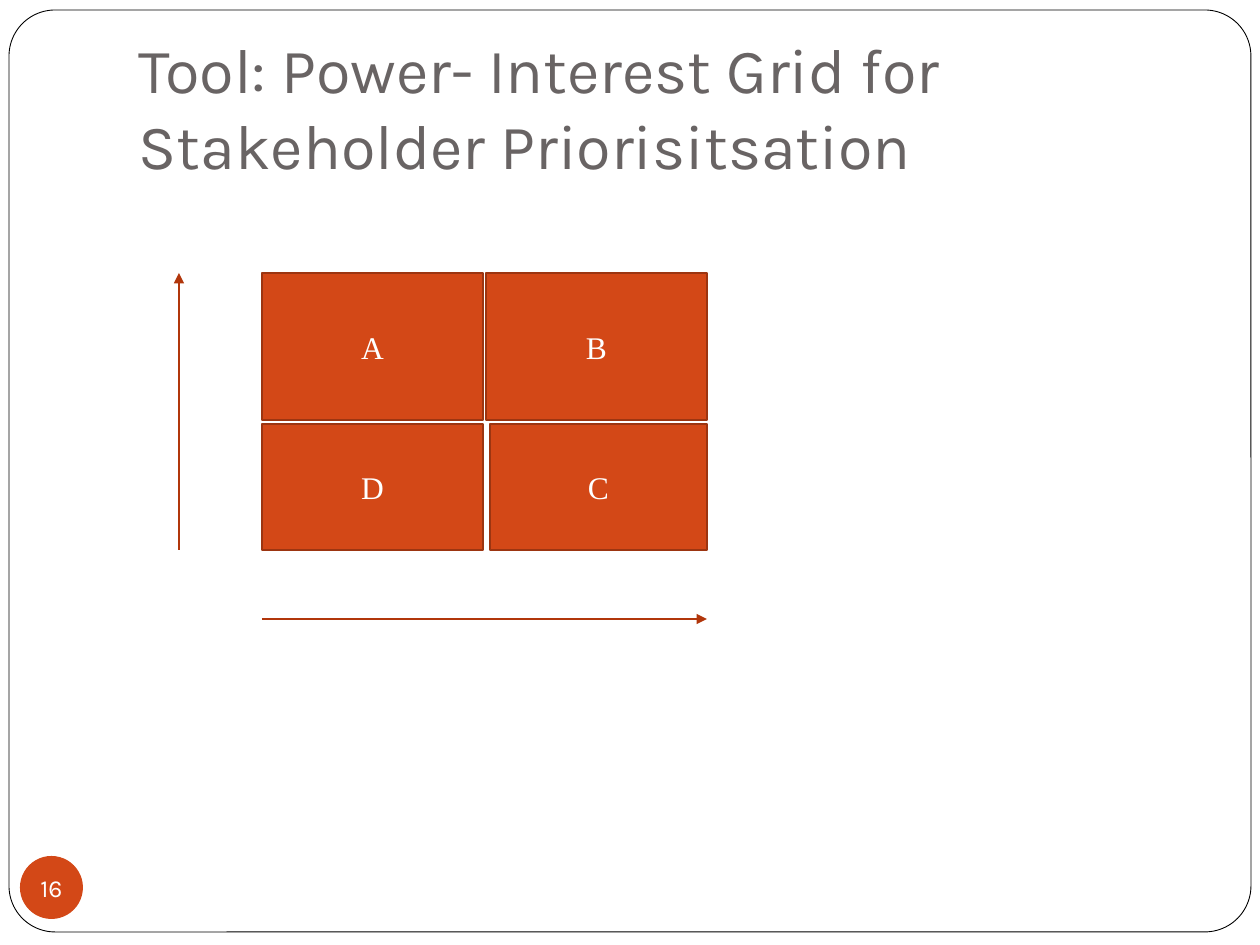
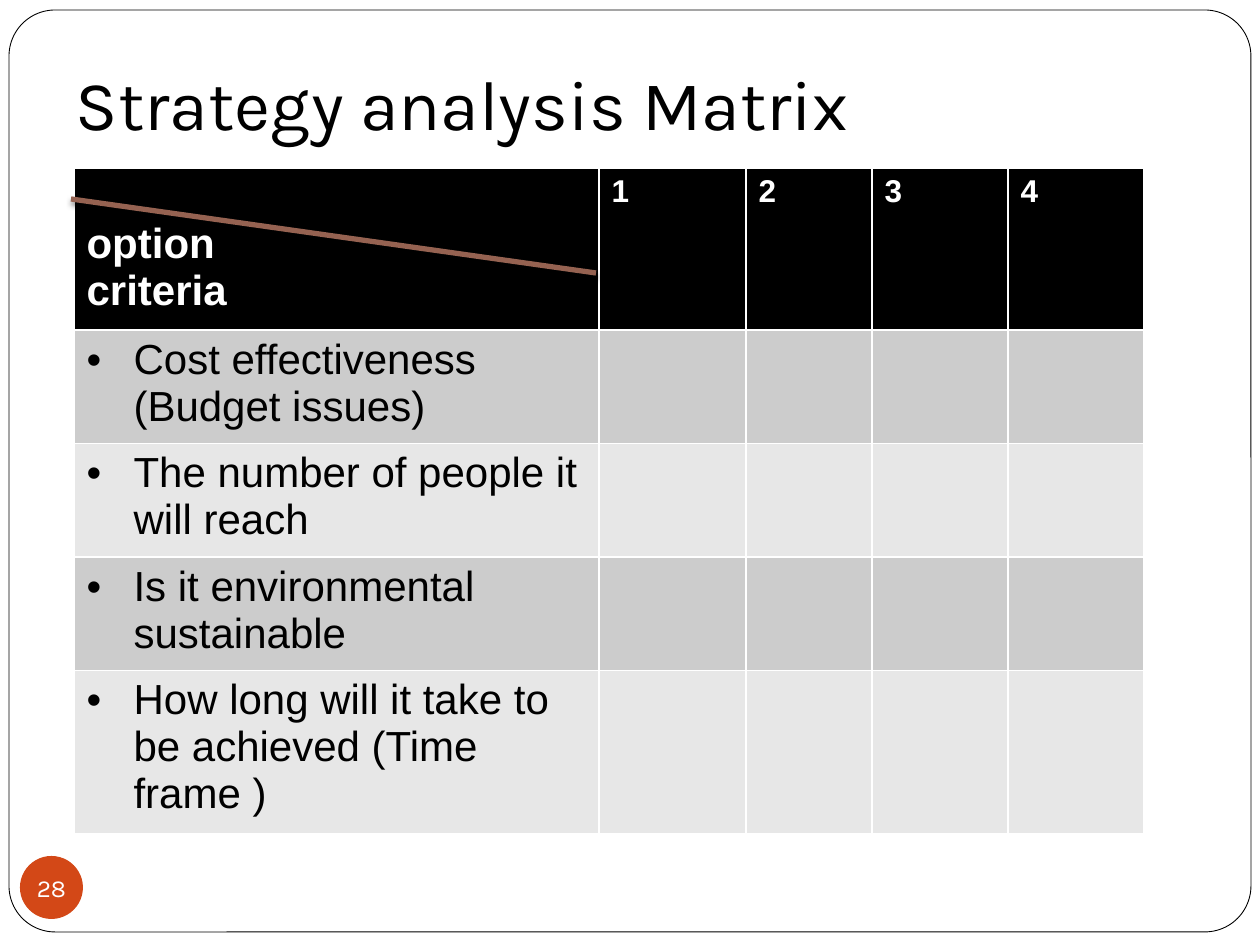
"""Builds two slides: a power-interest grid and a strategy analysis matrix."""
from lxml import etree
from pptx import Presentation
from pptx.dml.color import RGBColor
from pptx.enum.shapes import MSO_CONNECTOR, MSO_SHAPE
from pptx.enum.text import MSO_ANCHOR, PP_ALIGN
from pptx.oxml.ns import qn
from pptx.util import Pt

PX = 7257
ROUNDED, OVAL, RECT = MSO_SHAPE.ROUNDED_RECTANGLE, MSO_SHAPE.OVAL, MSO_SHAPE.RECTANGLE
STRAIGHT = MSO_CONNECTOR.STRAIGHT
TOP, MIDDLE, BOTTOM = MSO_ANCHOR.TOP, MSO_ANCHOR.MIDDLE, MSO_ANCHOR.BOTTOM
LEFT, CENTER = PP_ALIGN.LEFT, PP_ALIGN.CENTER
WHITE, BLACK, GREY = "FFFFFF", "000000", "696464"
ORANGE, RUST, ARROW, BROWN = "D34817", "9C3511", "B1360B", "956251"
BANDS = ["CCCCCC", "E7E7E7"]
color = RGBColor.from_string

TITLE_FRAME = {"word_wrap": True, "vertical_anchor": BOTTOM, "margin_left": 13 * PX,
               "margin_right": 13 * PX, "margin_top": 6 * PX, "margin_bottom": 13 * PX}
BADGE_FRAME = {"word_wrap": False, "vertical_anchor": MIDDLE, "margin_left": 0,
               "margin_right": 0, "margin_top": 0, "margin_bottom": 0}
QUADRANT_FRAME = {"word_wrap": True, "vertical_anchor": MIDDLE}


def write(frame, text, frame_format, align, font_format, hex_color):
    """Fill a text frame and format it and all its runs."""
    frame.text = text
    for key, value in frame_format.items():
        setattr(frame, key, value)
    for paragraph in frame.paragraphs:
        paragraph.alignment = align
        for run in paragraph.runs:
            for key, value in font_format.items():
                setattr(run.font, key, value)
            run.font.color.rgb = color(hex_color)


def draw_line(slide, ends, hex_color, width):
    """Draw a straight line and return its line and effect elements."""
    line = slide.shapes.add_connector(STRAIGHT, *(end * PX for end in ends))
    line.line.color.rgb = color(hex_color)
    line.line.width = Pt(width)
    properties = line.line._get_or_add_ln().getparent()
    effects = etree.SubElement(properties, qn("a:effectLst"))
    return properties.find(qn("a:ln")), effects


deck = Presentation()
deck.slide_width, deck.slide_height = 1260 * PX, 945 * PX
slides = []
for title, title_box, title_size, title_color, number in [
    ("Tool: Power- Interest Grid for Stakeholder Priorisitsation",
     (126, 38, 1071, 157), 36, GREY, "16"),
    ("Strategy analysis Matrix", (63, 42, 1134, 116), 40, BLACK, "28"),
]:
    slide = deck.slides.add_slide(deck.slide_layouts[6])
    slides.append(slide)
    border = slide.shapes.add_shape(ROUNDED, 9 * PX, 10 * PX, 1242 * PX, 922 * PX)
    border.adjustments[0] = 0.05
    border.shadow.inherit = False
    border.fill.solid()
    border.fill.fore_color.rgb = color(WHITE)
    border.line.color.rgb = color(BLACK)
    border.line.width = Pt(0.5)

    heading = slide.shapes.add_textbox(*(side * PX for side in title_box))
    write(heading.text_frame, title, TITLE_FRAME, LEFT,
          {"name": "Karla", "size": Pt(title_size)}, title_color)

    badge = slide.shapes.add_shape(OVAL, 20 * PX, 856 * PX, 63 * PX, 63 * PX)
    badge.shadow.inherit = False
    badge.fill.solid()
    badge.fill.fore_color.rgb = color(ORANGE)
    badge.line.fill.background()
    write(badge.text_frame, number, BADGE_FRAME, CENTER,
          {"name": "Karla", "size": Pt(14)}, WHITE)

grid_slide, matrix_slide = slides

for letter, left, top, width, height in [
    ("A", 262, 273, 221, 147), ("B", 486, 273, 221, 147),
    ("D", 262, 424, 221, 126), ("C", 490, 424, 217, 126),
]:
    quadrant = grid_slide.shapes.add_shape(RECT, left * PX, top * PX, width * PX, height * PX)
    quadrant.shadow.inherit = False
    quadrant.fill.solid()
    quadrant.fill.fore_color.rgb = color(ORANGE)
    quadrant.line.color.rgb = color(RUST)
    quadrant.line.width = Pt(1)
    write(quadrant.text_frame, letter, QUADRANT_FRAME, CENTER,
          {"name": "Times New Roman", "size": Pt(18)}, WHITE)

for axis in [(179, 550, 179, 273), (262, 619, 707, 619)]:
    stroke, _ = draw_line(grid_slide, axis, ARROW, 0.75)
    etree.SubElement(stroke, qn("a:tailEnd"), type="triangle")

criteria = ["Cost effectiveness (Budget issues)", "The number of people it will reach",
            "Is it environmental sustainable", "How long will it take to be achieved (Time frame )"]
column_widths = [525, 147, 126, 136, 136]
row_heights = [162, 95, 95, 95, 162]
matrix = matrix_slide.shapes.add_table(
    len(row_heights), len(column_widths), 74 * PX, 168 * PX,
    sum(column_widths) * PX, sum(row_heights) * PX).table
for column, width in zip(matrix.columns, column_widths):
    column.width = width * PX
for row, height in zip(matrix.rows, row_heights):
    row.height = height * PX
for row_index, row in enumerate(matrix.rows):
    for cell in row.cells:
        cell.fill.solid()
        cell.fill.fore_color.rgb = color(BANDS[(row_index - 1) % 2] if row_index else BLACK)

for index, label in enumerate(["option\ncriteria", "1", "2", "3", "4"]):
    write(matrix.cell(0, index).text_frame, label, {}, LEFT,
          {"name": "Arial", "size": Pt(18 if index else 24), "bold": True}, WHITE)
matrix.cell(0, 0).margin_top = 53 * PX

for index, criterion in enumerate(criteria, 1):
    frame = matrix.cell(index, 0).text_frame
    write(frame, criterion, {}, LEFT,
          {"name": "Arial", "size": Pt(24), "bold": False}, BLACK)
    properties = frame.paragraphs[0]._p.get_or_add_pPr()
    properties.set("marL", str(47 * PX))
    properties.set("indent", str(-47 * PX))
    etree.SubElement(properties, qn("a:buFont"), typeface="Arial")
    etree.SubElement(properties, qn("a:buChar"), char="•")

_, effects = draw_line(matrix_slide, (71, 199, 596, 273), BROWN, 3)
shadow = etree.SubElement(effects, qn("a:outerShdw"), blurRad=str(Pt(3)), dist=str(Pt(2)),
                          dir="5400000", rotWithShape="0")
shade = etree.SubElement(shadow, qn("a:srgbClr"), val=BLACK)
etree.SubElement(shade, qn("a:alpha"), val="50000")

deck.save("out.pptx")
